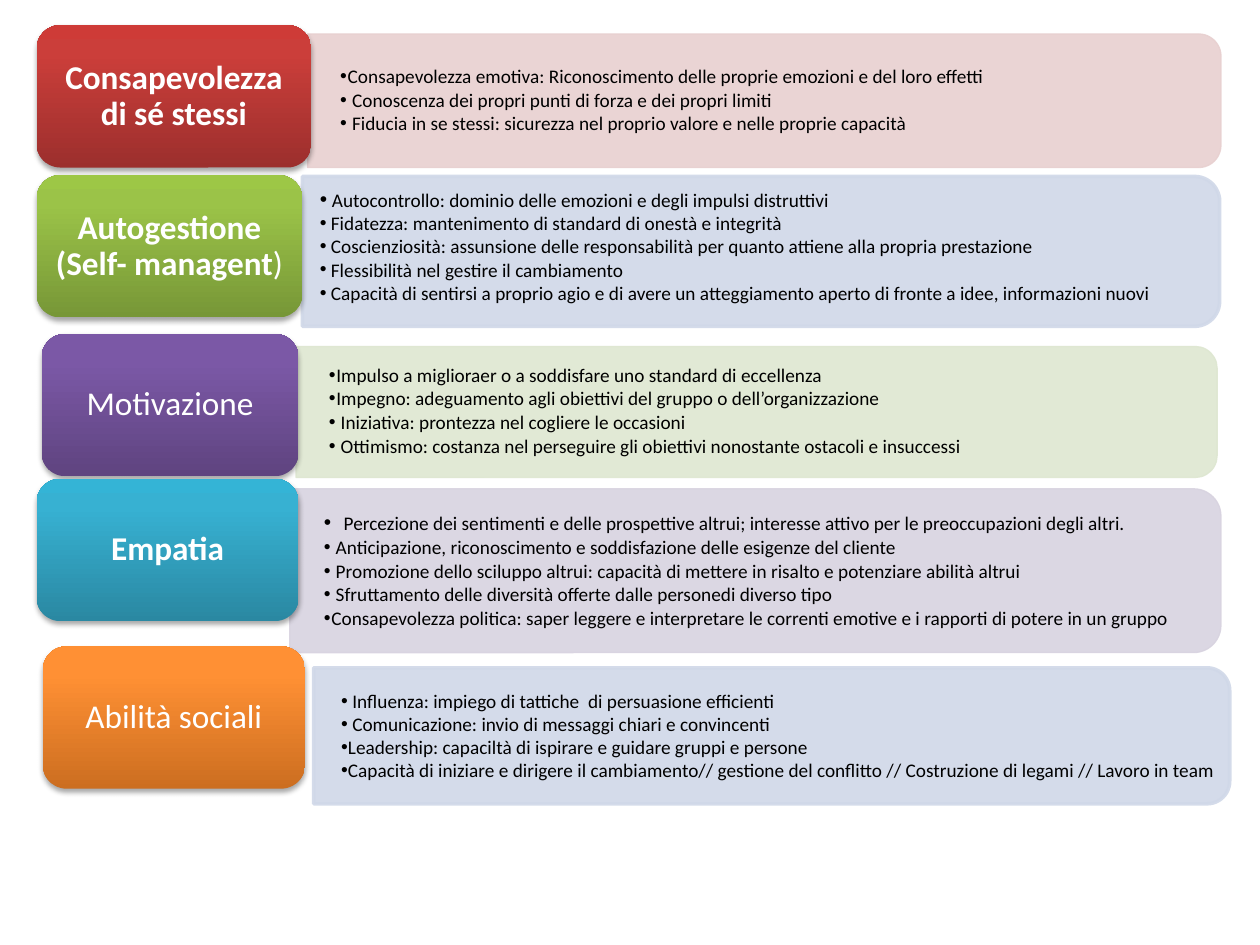
from copy import deepcopy

from lxml.etree import SubElement
from pptx import Presentation
from pptx.dml.color import RGBColor
from pptx.enum.shapes import MSO_SHAPE
from pptx.enum.text import MSO_ANCHOR, PP_ALIGN
from pptx.oxml.ns import qn
from pptx.util import Inches, Pt


def paint(color, value, alpha=None):
    """Set a colour from a hex string, with an optional opacity in percent."""
    color.rgb = RGBColor.from_string(value)
    return alpha


def add_span(para, text, size, value, bold=False):
    span = para.add_run()
    span.text = text
    span.font.name = "Calibri"
    span.font.size = Pt(size)
    span.font.bold = bold
    paint(span.font.color, value)


# Each row: panel and card as left, top, width, height; card title lines as
# runs of (text, bold); bullets box, its style and its lines
rows = [
    dict(panel=(2.44, 0.27, 7.25, 1.06), tint="E8D0D0", border=0.75,
         card=(0.29, 0.2, 2.18), shades=("9C2F2D", "CB3E3A", "CE3B37"),
         title=[[("Consapevolezza di sé stessi", True)]],
         box=(2.43, 0.32, 7.19, 0.96), centred=True, lead=None,
         lines=["Consapevolezza emotiva: Riconoscimento delle proprie emozioni e del loro effetti",
                " Conoscenza dei propri punti di forza e dei propri limiti",
                " Fiducia in se stessi: sicurezza nel proprio valore e nelle proprie capacità"]),
    dict(panel=(2.4, 1.4, 7.28, 1.19), tint="D0D8E8", border=2,
         card=(0.29, 1.39, 2.11), shades=("779737", "9BC348", "9DC746"),
         title=[[("Autogestione", True)], [("(Self- managent", True), (")", False)]],
         box=(2.44, 1.43, 7.11, 1.04), centred=False, lead=12,
         lines=["Autocontrollo: dominio delle emozioni e degli impulsi distruttivi",
                " Fidatezza: mantenimento di standard di onestà e integrità",
                " Coscienziosità: assunsione delle responsabilità per quanto attiene alla propria prestazione",
                " Flessibilità nel gestire il cambiamento",
                " Capacità di sentirsi a proprio agio e di avere un atteggiamento aperto di fronte a idee, informazioni nuovi"]),
    dict(panel=(2.35, 2.75, 7.31, 1.04), tint="DEE7D1", border=0.75,
         card=(0.33, 2.65, 2.04), shades=("5F4480", "7B58A6", "7C57A8"),
         title=[[("Motivazione", False)]],
         box=(2.34, 2.8, 7.26, 0.93), centred=True, lead=None,
         lines=["Impulso a miglioraer o a soddisfare uno standard di eccellenza",
                "Impegno: adeguamento agli obiettivi del gruppo o dell’organizzazione",
                " Iniziativa: prontezza nel cogliere le occasioni",
                " Ottimismo: costanza nel perseguire gli obiettivi nonostante ostacoli e insuccessi"]),
    dict(panel=(2.3, 3.88, 7.39, 1.3), tint="D8D3E0", border=0.75,
         card=(0.29, 3.8, 2.08), shades=("2A88A2", "37B1D2", "34B4D6"),
         title=[[("Empatia", True)]],
         box=(2.3, 3.94, 7.32, 1.18), centred=True, lead=12,
         lines=["Percezione dei sentimenti e delle prospettive altrui; interesse attivo per le preoccupazioni degli altri.",
                " Anticipazione, riconoscimento e soddisfazione delle esigenze del cliente",
                " Promozione dello sciluppo altrui: capacità di mettere in risalto e potenziare abilità altrui",
                " Sfruttamento delle diversità offerte dalle personedi diverso tipo",
                "Consapevolezza politica: saper leggere e interpretare le correnti emotive e i rapporti di potere in un gruppo"]),
    dict(panel=(2.49, 5.3, 7.27, 1.08), tint="D0D8E8", border=2,
         card=(0.34, 5.13, 2.08), shades=("CC6E20", "FF9034", "FF9136"),
         title=[[("Abilità sociali", False)]],
         box=(2.61, 5.42, 7.39, 0.85), centred=False, lead=None,
         lines=[" Influenza: impiego di tattiche  di persuasione efficienti",
                " Comunicazione: invio di messaggi chiari e convincenti",
                "Leadership: capaciltà di ispirare e guidare gruppi e persone",
                "Capacità di iniziare e dirigere il cambiamento// gestione del conflitto // Costruzione di legami // Lavoro in team"]),
]

deck = Presentation()
deck.slide_width, deck.slide_height = Inches(10), Inches(7.5)
page = deck.slides.add_slide(deck.slide_layouts[6])

for row in rows:
    # Panel: an upright shape turned a quarter, so its right corners are round
    left, top, width, height = row["panel"]
    shift = (width - height) / 2
    panel = page.shapes.add_shape(
        MSO_SHAPE.ROUND_2_SAME_RECTANGLE, Inches(left + shift), Inches(top - shift),
        Inches(height), Inches(width))
    panel.rotation = 90
    panel.shadow.inherit = False
    panel.fill.solid()
    paint(panel.fill.fore_color, row["tint"])
    panel.line.width = Pt(row["border"])
    paint(panel.line.color, row["tint"])
    for color in panel._element.spPr.iter(qn("a:srgbClr")):
        SubElement(color, qn("a:alpha"), val="90000")

    # Card: three-stop gradient, dark at the bottom
    left, top, width = row["card"]
    card = page.shapes.add_shape(
        MSO_SHAPE.ROUNDED_RECTANGLE, Inches(left), Inches(top), Inches(width), Inches(1.13))
    card.line.fill.background()
    card.fill.gradient()
    card.fill.gradient_angle = 90
    stops = card._element.spPr.find(qn("a:gradFill")).find(qn("a:gsLst"))
    stops.append(deepcopy(stops[-1]))
    for stop, place, shade in zip(card.fill.gradient_stops, (0, 0.8, 1), row["shades"]):
        stop.position = place
        paint(stop.color, shade)

    # Soft shadow below the card
    card.shadow.inherit = False
    effects = card._element.spPr.find(qn("a:effectLst"))
    shadow = SubElement(effects, qn("a:outerShdw"), blurRad=str(Pt(3.1)),
                        dist=str(Pt(1.8)), dir="5400000", rotWithShape="0")
    black = SubElement(shadow, qn("a:srgbClr"), val="000000")
    SubElement(black, qn("a:alpha"), val="35000")

    # Card title
    frame = card.text_frame
    frame.word_wrap = True
    frame.vertical_anchor = MSO_ANCHOR.MIDDLE
    frame.margin_left = frame.margin_right = Inches(0.08)
    frame.margin_top = frame.margin_bottom = Inches(0.04)
    para = frame.paragraphs[0]
    para.alignment = PP_ALIGN.CENTER
    para.line_spacing = 0.9
    for number, spans in enumerate(row["title"]):
        if number:
            para.add_line_break()
        for text, bold in spans:
            add_span(para, text, 19, "FFFFFF", bold)

    # Bullets
    box = page.shapes.add_textbox(*[Inches(value) for value in row["box"]])
    frame = box.text_frame
    frame.word_wrap = True
    if row["centred"]:
        frame.vertical_anchor = MSO_ANCHOR.MIDDLE
        frame.margin_left = frame.margin_right = Inches(0.27)
        frame.margin_top = frame.margin_bottom = Inches(0.14)
    for number, line in enumerate(row["lines"]):
        para = frame.paragraphs[0] if number == 0 else frame.add_paragraph()
        has_lead = number == 0 and row["lead"]
        properties = para._p.get_or_add_pPr()
        if row["centred"]:
            para.line_spacing = 0.9
            para.space_after = Pt(1.65)
            indent = Inches(0.12 if has_lead else 0.06)
            properties.set("marL", str(indent))
            properties.set("indent", str(-indent))
        SubElement(properties, qn("a:buFont"), typeface="Arial")
        SubElement(properties, qn("a:buChar"), char="•")
        if has_lead:
            add_span(para, " ", row["lead"], "000000")
        add_span(para, line, 11, "000000")

deck.save("out.pptx")
